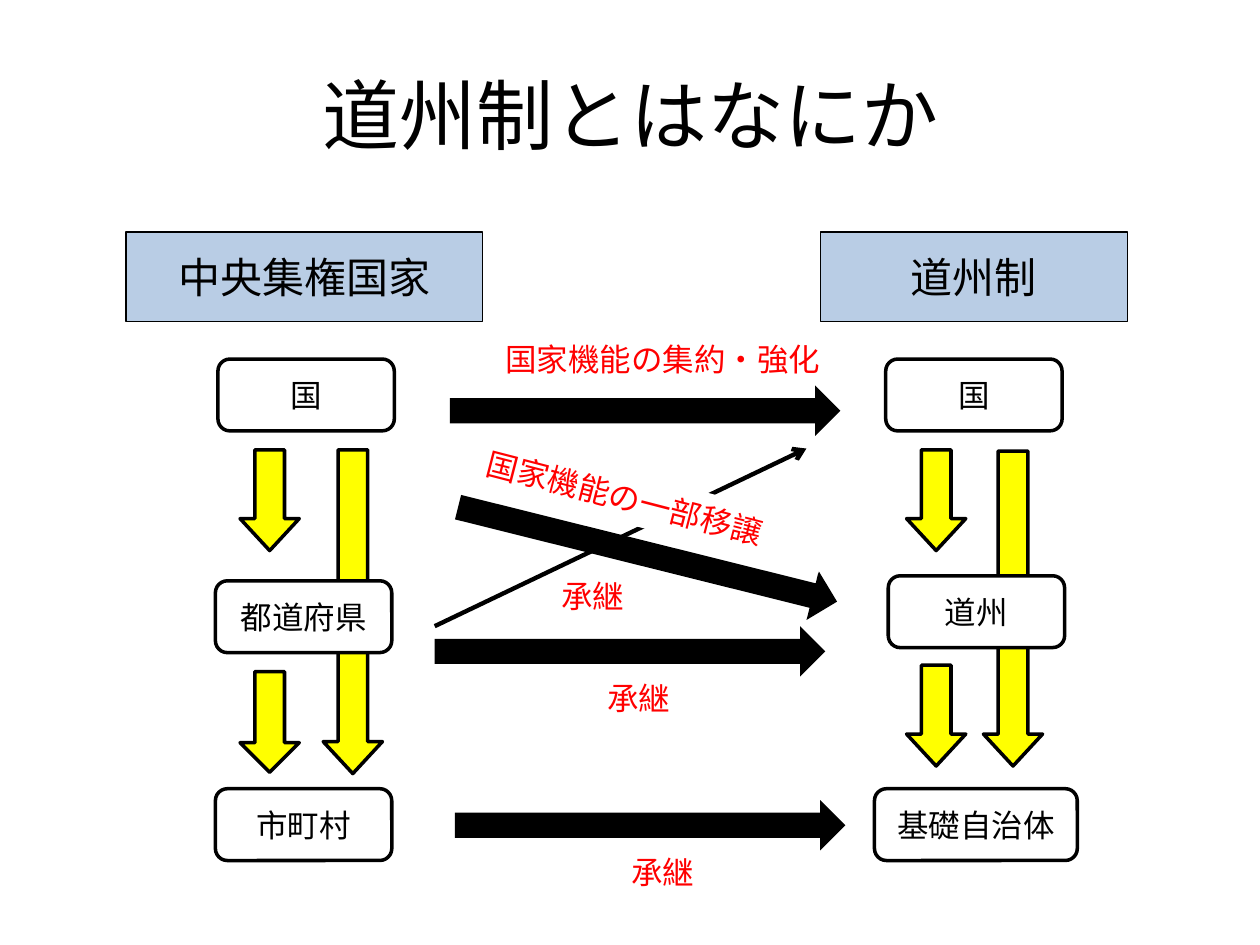
from lxml.etree import SubElement
from pptx import Presentation
from pptx.dml.color import RGBColor
from pptx.enum.shapes import MSO_CONNECTOR, MSO_SHAPE
from pptx.enum.text import MSO_ANCHOR, PP_ALIGN
from pptx.oxml.ns import qn
from pptx.util import Inches, Pt

THEME = {
    "title_font": "Noto Sans CJK JP", "font": "Calibri",
    "title": 44, "heading": 24, "body": 18,
    "ink": "000000", "paper": "FFFFFF", "accent": "FF0000",
    "heading_fill": "B9CDE5", "flow": "FFFF00",
}

TITLE = "道州制とはなにか"
HEADING_TOP, HEADING_HEIGHT = 1.84, 0.71
LEVEL_HEIGHT = 0.57
FLOW_WIDTH = 0.47
BAND_LENGTH, BAND_HEIGHT = 3.1, 0.4

# Levels: name, left, top, width. Flows: centre x, top, length, head ratio.
SYSTEMS = [
    {"heading": ("中央集権国家", 1.0, 2.83),
     "levels": [("国", 1.73, 2.85, 1.4), ("都道府県", 1.71, 4.61, 1.4),
                ("市町村", 1.71, 6.26, 1.4)],
     "flows": [(2.8, 3.57, 2.57, 0.54), (2.14, 3.57, 0.8, 0.54),
               (2.14, 5.33, 0.8, 0.5)]},
    {"heading": ("道州制", 6.51, 2.44),
     "levels": [("国", 7.03, 2.85, 1.4), ("道州", 7.05, 4.57, 1.4),
                ("基礎自治体", 6.94, 6.26, 1.61)],
     "flows": [(8.04, 3.58, 2.5, 0.54), (7.43, 3.57, 0.8, 0.54),
               (7.43, 5.28, 0.8, 0.54)]},
]

# Each transfer: its band (left, top, angle) and label (text, left, top, width).
TRANSFERS = [
    ((3.57, 3.06, 0), ("国家機能の集約・強化", 3.83, 2.65, 2.86)),
    ((3.61, 6.35, 0), ("承継", 3.83, 6.72, 2.86)),
    ((3.45, 4.97, 0), ("承継", 3.64, 5.34, 2.86)),
]
RISING_LINE = (3.45, 4.97, 6.4, 3.56)
RISING_LABEL = ("承継", 3.64, 4.53, 2.13)
FALLING_BAND = (3.59, 4.2, 14)
FALLING_LABEL = ("国家機能の一部移譲", 3.73, 3.8, 2.86)
FALLING_LABEL_ANGLE = 14.5


def color(role):
    return RGBColor.from_string(THEME[role])


def write(shape, text, size="body", ink="ink", align=PP_ALIGN.CENTER,
          anchor=MSO_ANCHOR.MIDDLE, font="font"):
    frame = shape.text_frame
    frame.word_wrap = True
    frame.vertical_anchor = anchor
    paragraph = frame.paragraphs[0]
    paragraph.text = text
    paragraph.alignment = align
    paragraph.font.name = THEME[font]
    paragraph.font.size = Pt(THEME[size])
    paragraph.font.color.rgb = color(ink)


def add_block(group, preset, box, fill, line_width=0, angle=0):
    block = group.shapes.add_shape(preset, *map(Inches, box))
    block.shadow.inherit = False
    block.rotation = angle
    block.fill.solid()
    block.fill.fore_color.rgb = color(fill)
    if line_width:
        block.line.color.rgb = color("ink")
        block.line.width = Pt(line_width)
    else:
        block.line.fill.background()
    return block


def add_flow(group, center, top, length, head):
    """Add a downward arrow, as a right arrow turned about its centre."""
    box = (center - length / 2, top + length / 2 - FLOW_WIDTH / 2,
           length, FLOW_WIDTH)
    arrow = add_block(group, MSO_SHAPE.RIGHT_ARROW, box, "flow", 2, 90)
    arrow.adjustments[1] = head


def add_system(slide, system):
    group = slide.shapes.add_group_shape()
    through_flow, *step_flows = system["flows"]
    add_flow(group, *through_flow)
    name, left, width = system["heading"]
    heading = add_block(group, MSO_SHAPE.RECTANGLE,
                        (left, HEADING_TOP, width, HEADING_HEIGHT),
                        "heading_fill", 0.75)
    write(heading, name, "heading")
    for name, left, top, width in system["levels"]:
        level = add_block(group, MSO_SHAPE.ROUNDED_RECTANGLE,
                          (left, top, width, LEVEL_HEIGHT), "paper", 2)
        write(level, name)
    for flow in step_flows:
        add_flow(group, *flow)


def add_band(group, left, top, angle):
    add_block(group, MSO_SHAPE.RIGHT_ARROW,
              (left, top, BAND_LENGTH, BAND_HEIGHT), "ink", angle=angle)


def add_label(group, text, left, top, width):
    label = group.shapes.add_textbox(
        *map(Inches, (left, top, width, BAND_HEIGHT)))
    write(label, text, ink="accent", anchor=MSO_ANCHOR.TOP)


def add_rising_line(group):
    line = group.shapes.add_connector(
        MSO_CONNECTOR.STRAIGHT, *map(Inches, RISING_LINE))
    line.line.color.rgb = color("ink")
    line.line.width = Pt(2.5)
    SubElement(line.line._get_or_add_ln(), qn("a:tailEnd"), type="arrow")
    SubElement(line._element.spPr, qn("a:effectLst"))


def main():
    deck = Presentation()
    deck.slide_width, deck.slide_height = Inches(10), Inches(7.5)
    slide = deck.slides.add_slide(deck.slide_layouts[5])

    title = slide.shapes.title
    title.left, title.top, title.width, title.height = map(
        Inches, (0.51, 0.28, 9, 1.25))
    write(title, TITLE, "title", font="title_font")

    for system in SYSTEMS:
        add_system(slide, system)

    for band, label in TRANSFERS:
        group = slide.shapes.add_group_shape()
        add_band(group, *band)
        add_label(group, *label)
    add_rising_line(group)
    add_label(group, *RISING_LABEL)

    falling = slide.shapes.add_group_shape()
    add_band(falling, *FALLING_BAND)
    text, left, top, width = FALLING_LABEL
    plate = add_block(falling, MSO_SHAPE.RECTANGLE,
                      (left, top, width, BAND_HEIGHT), "paper",
                      angle=FALLING_LABEL_ANGLE)
    write(plate, text, ink="accent", align=PP_ALIGN.LEFT, anchor=MSO_ANCHOR.TOP)

    deck.save("out.pptx")


if __name__ == "__main__":
    main()
